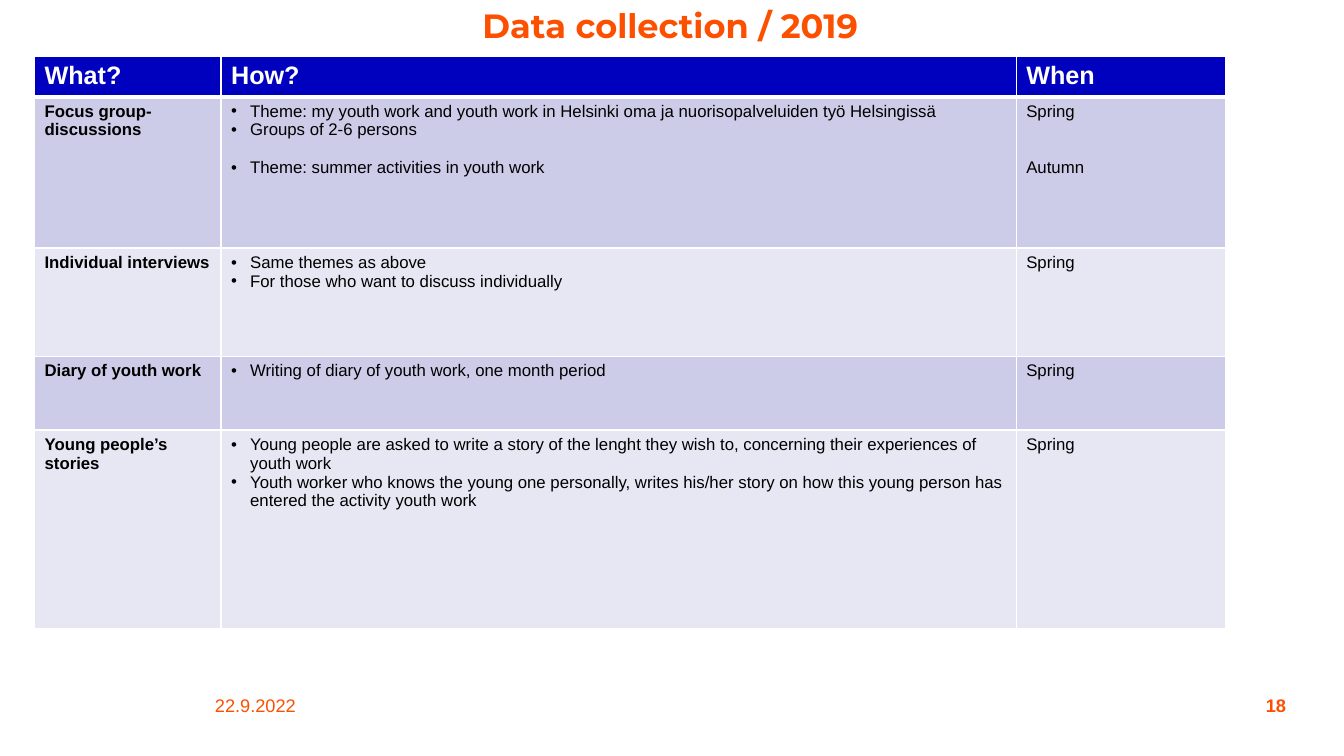
from dataclasses import dataclass

from lxml.etree import SubElement as Sub
from pptx import Presentation
from pptx.dml.color import RGBColor as Rgb
from pptx.enum.text import MSO_ANCHOR as Anchor, PP_ALIGN as Align
from pptx.oxml.ns import qn
from pptx.util import Cm, Pt


@dataclass(frozen=True)
class Theme:
    accent: str = "FD4F00"
    head: str = "0000BF"
    bands: tuple = ("CCCCE8", "E7E7F4")
    white: str = "FFFFFF"
    black: str = "000000"
    body: str = "Arial"
    display: str = "Montserrat"
    title: int = 24
    header: int = 18
    foot: int = 13
    cell: int = 12
    line: float = 13.5
    thin: int = 1
    thick: int = 3


THEME = Theme()

HEADS = ("What?", "How?", "When")
# Each entry is text, or (text, number of open lines above it)
ROWS = (
    ("Focus group- discussions",
     ("Theme: my youth work and youth work in Helsinki oma ja nuorisopalveluiden työ Helsingissä",
      "Groups of 2-6 persons",
      ("Theme: summer activities in youth work", 1)),
     ("Spring", ("Autumn", 2))),
    ("Individual interviews",
     ("Same themes as above", "For those who want to discuss individually"),
     ("Spring",)),
    ("Diary of youth work",
     ("Writing of diary of youth work, one month period",),
     ("Spring",)),
    ("Young people’s stories",
     ("Young people are asked to write a story of the lenght they wish to, "
      "concerning their experiences of youth work",
      "Youth worker who knows the young one personally, writes his/her story "
      "on how this young person has entered the activity youth work"),
     ("Spring",)),
)
WIDTHS = (4.7, 20.04, 5.28)
HEIGHTS = (0.76, 3.81, 2.74, 1.85, 5.0)


def add_run(para, text, size, color, bold=False, face=THEME.body):
    run = para.add_run()
    run.text = text
    font = run.font
    font.name, font.size, font.bold = face, Pt(size), bold
    font.color.rgb = Rgb.from_string(color)


def add_label(slide, box, text, size, align, anchor=Anchor.MIDDLE, **style):
    frame = slide.shapes.add_textbox(*map(Cm, box)).text_frame
    frame.word_wrap = True
    frame.vertical_anchor = anchor
    frame.margin_left = frame.margin_right = 0
    frame.margin_top = frame.margin_bottom = 0
    para = frame.paragraphs[0]
    para.alignment = align
    add_run(para, text, size, THEME.accent, **style)
    return para


def add_bullet(para):
    props = para._p.get_or_add_pPr()
    props.set("marL", str(Cm(0.48)))
    props.set("indent", str(-Cm(0.48)))
    Sub(props, qn("a:buFont"), typeface=THEME.body)
    Sub(props, qn("a:buChar"), char="•")


def style_cell(cell, fill, top, bottom):
    props = cell._tc.get_or_add_tcPr()
    edges = {"L": THEME.thin, "R": THEME.thin, "T": top, "B": bottom}
    for side, width in edges.items():
        line = Sub(props, qn(f"a:ln{side}"), w=str(Pt(width)))
        Sub(Sub(line, qn("a:solidFill")), qn("a:srgbClr"), val=THEME.white)
    cell.fill.solid()
    cell.fill.fore_color.rgb = Rgb.from_string(fill)


def fill_cell(cell, items, bold=False, bullet=False):
    frame = cell.text_frame
    for num, item in enumerate(items):
        text, gap = (item, 0) if isinstance(item, str) else item
        para = frame.add_paragraph() if num else frame.paragraphs[0]
        if gap:
            para.space_before = Pt(gap * THEME.line)
        if bullet:
            add_bullet(para)
        add_run(para, text, THEME.cell, THEME.black, bold)


def add_grid(slide):
    box = map(Cm, (0.87, 1.42, sum(WIDTHS), sum(HEIGHTS)))
    grid = slide.shapes.add_table(len(HEIGHTS), len(WIDTHS), *box).table
    for col, width in zip(grid.columns, WIDTHS):
        col.width = Cm(width)
    for row, height in zip(grid.rows, HEIGHTS):
        row.height = Cm(height)

    # Header row
    for cell, text in zip(grid.rows[0].cells, HEADS):
        style_cell(cell, THEME.head, THEME.thin, THEME.thick)
        add_run(cell.text_frame.paragraphs[0], text, THEME.header, THEME.white, True)

    # Body rows in alternating bands
    for num, (what, how, when) in enumerate(ROWS):
        cells = grid.rows[num + 1].cells
        for cell in cells:
            style_cell(cell, THEME.bands[num % 2],
                       THEME.thin if num else THEME.thick, THEME.thin)
        fill_cell(cells[0], (what,), bold=True)
        fill_cell(cells[1], how, bullet=True)
        fill_cell(cells[2], when)


def main():
    deck = Presentation()
    deck.slide_width, deck.slide_height = Cm(33.87), Cm(19.05)
    slide = deck.slides.add_slide(deck.slide_layouts[6])

    # Footer
    add_label(slide, (4.62, 17.42, 3.63, 0.71), "22.9.2022", THEME.foot, Align.CENTER)
    add_label(slide, (28.98, 17.42, 3.43, 0.71), "18", THEME.foot, Align.RIGHT, bold=True)

    # Title
    title = add_label(slide, (1.32, 0.25, 31.14, 2.9), "Data collection / 2019",
                      THEME.title, Align.CENTER, Anchor.TOP,
                      bold=True, face=THEME.display)
    title.line_spacing = 0.9

    # Table
    add_grid(slide)
    deck.save("out.pptx")


if __name__ == "__main__":
    main()
